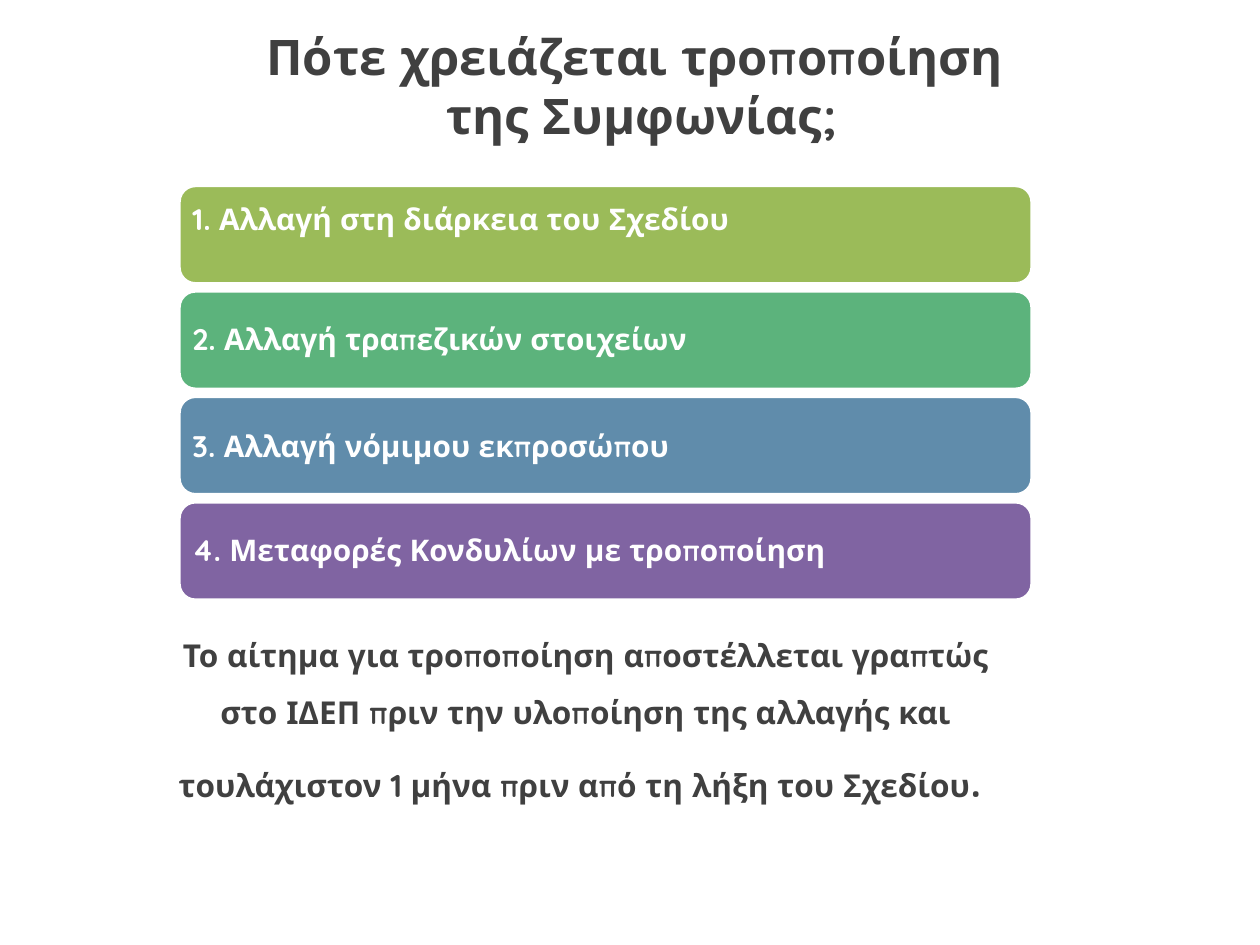
from pptx import Presentation
from pptx import util as u
from pptx.dml.color import RGBColor
from pptx.enum import shapes, text

COLORS = {
    "ink": "404040",
    "white": "FFFFFF",
    "green": "9BBB59",
    "teal": "5CB37C",
    "blue": "608CAB",
    "purple": "8064A2",
}


class Deck:
    font = "Quicksand"

    def __init__(self, width, height):
        self.prs = Presentation()
        self.prs.slide_width, self.prs.slide_height = u.Pt(width), u.Pt(height)
        self.s = self.prs.slides.add_slide(self.prs.slide_layouts[6])

    def color(self, name):
        return RGBColor.from_string(COLORS[name])

    def style(self, font, size, color):
        font.name, font.size, font.bold = self.font, u.Pt(size), True
        font.color.rgb = self.color(color)

    def text_box(self, x, y, w, h, runs, spacing=1.0, anchor=text.MSO_ANCHOR.TOP):
        """Add a centred paragraph of (wording, size) runs; newlines break lines."""
        tf = self.s.shapes.add_textbox(*map(u.Pt, (x, y, w, h))).text_frame
        tf.word_wrap = True
        tf.vertical_anchor = anchor
        p = tf.paragraphs[0]
        p.alignment = text.PP_ALIGN.CENTER
        p.line_spacing = spacing
        for wording, size in runs:
            for i, line in enumerate(wording.split("\n")):
                if i:
                    p.add_line_break()
                r = p.add_run()
                r.text = line
                self.style(r.font, size, "ink")

    def band(self, x, y, w, h, wording, fill, bottom):
        sp = self.s.shapes.add_shape(
            shapes.MSO_SHAPE.ROUNDED_RECTANGLE, *map(u.Pt, (x, y, w, h)))
        sp.shadow.inherit = False
        sp.fill.solid()
        sp.fill.fore_color.rgb = self.color(fill)
        sp.line.color.rgb = self.color("white")
        sp.line.width = u.Pt(2)
        tf = sp.text_frame
        tf.word_wrap = True
        tf.vertical_anchor = text.MSO_ANCHOR.MIDDLE
        tf.margin_left = tf.margin_right = tf.margin_top = u.Pt(5)
        tf.margin_bottom = u.Pt(bottom)
        p = tf.paragraphs[0]
        p.text = wording
        p.alignment = text.PP_ALIGN.LEFT
        self.style(p.font, 17, "white")


def main():
    deck = Deck(720, 540)
    deck.text_box(42.5, 9.4, 648, 79.2,
                  [("Πότε χρειάζεται τροποποίηση \nτης Συμφωνίας;", 28)],
                  anchor=text.MSO_ANCHOR.MIDDLE)

    # The bottom margin sets how high the text sits in its band.
    bands = [
        ("1. Αλλαγή στη διάρκεια του Σχεδίου", "green", 23),
        ("2. Αλλαγή τραπεζικών στοιχείων", "teal", 7),
        ("3. Αλλαγή νόμιμου εκπροσώπου", "blue", 5),
        ("4. Μεταφορές Κονδυλίων με τροποποίηση", "purple", 7),
    ]
    top, pitch = 106, 60.25
    for i, (wording, fill, bottom) in enumerate(bands):
        deck.band(102.3, top + i * pitch, 487.5, 56.2, wording, fill, bottom)

    deck.text_box(79.5, 349.2, 510.5, 110.9, [
        ("Το αίτημα για τροποποίηση αποστέλλεται γραπτώς στο ΙΔΕΠ πριν την "
         "υλοποίηση της αλλαγής και τουλάχιστον 1 μήνα πριν από τη λήξη του "
         "Σχεδίου", 18),
        (". ", 24),
    ], spacing=1.5)
    deck.prs.save("out.pptx")


if __name__ == "__main__":
    main()
